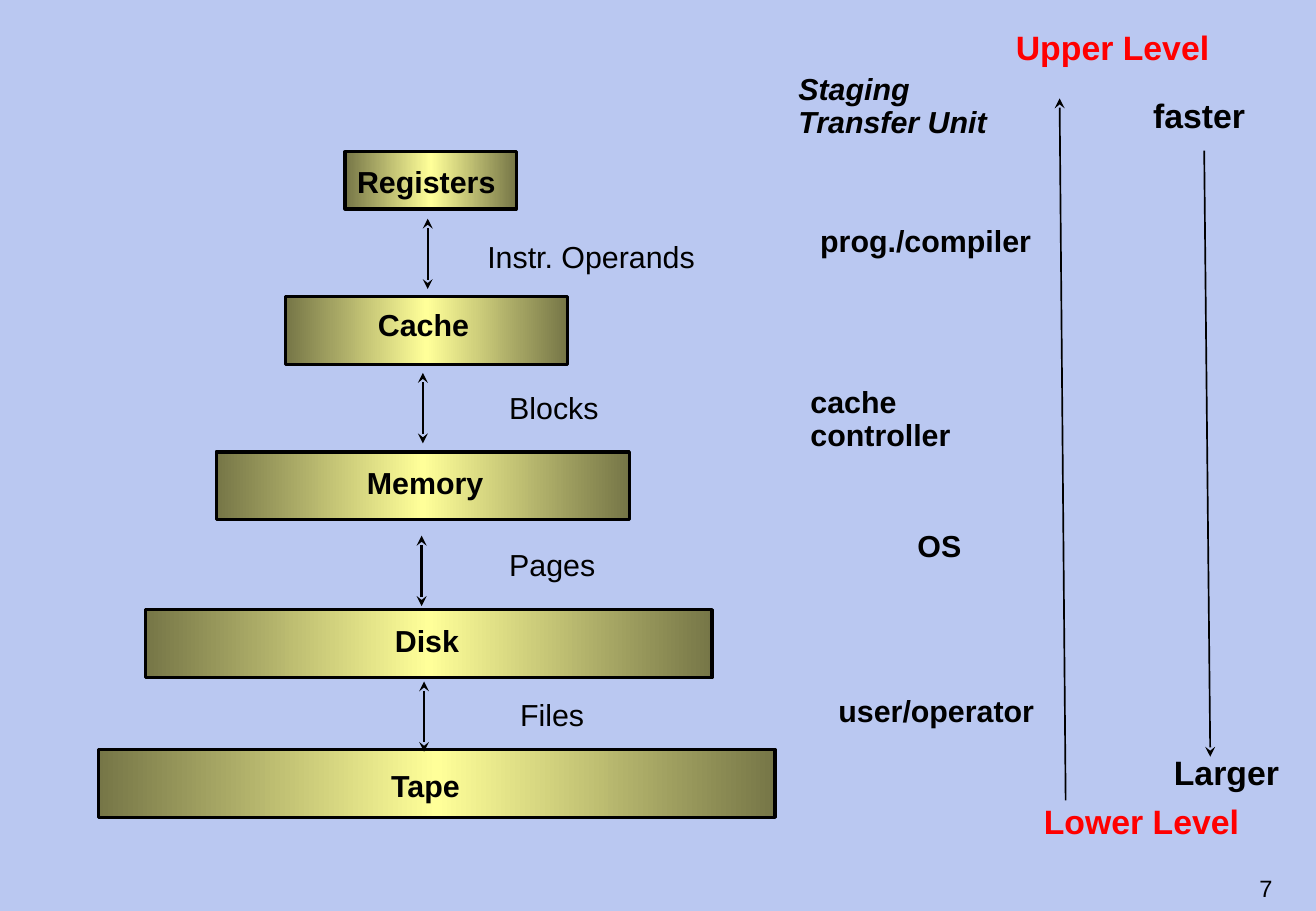
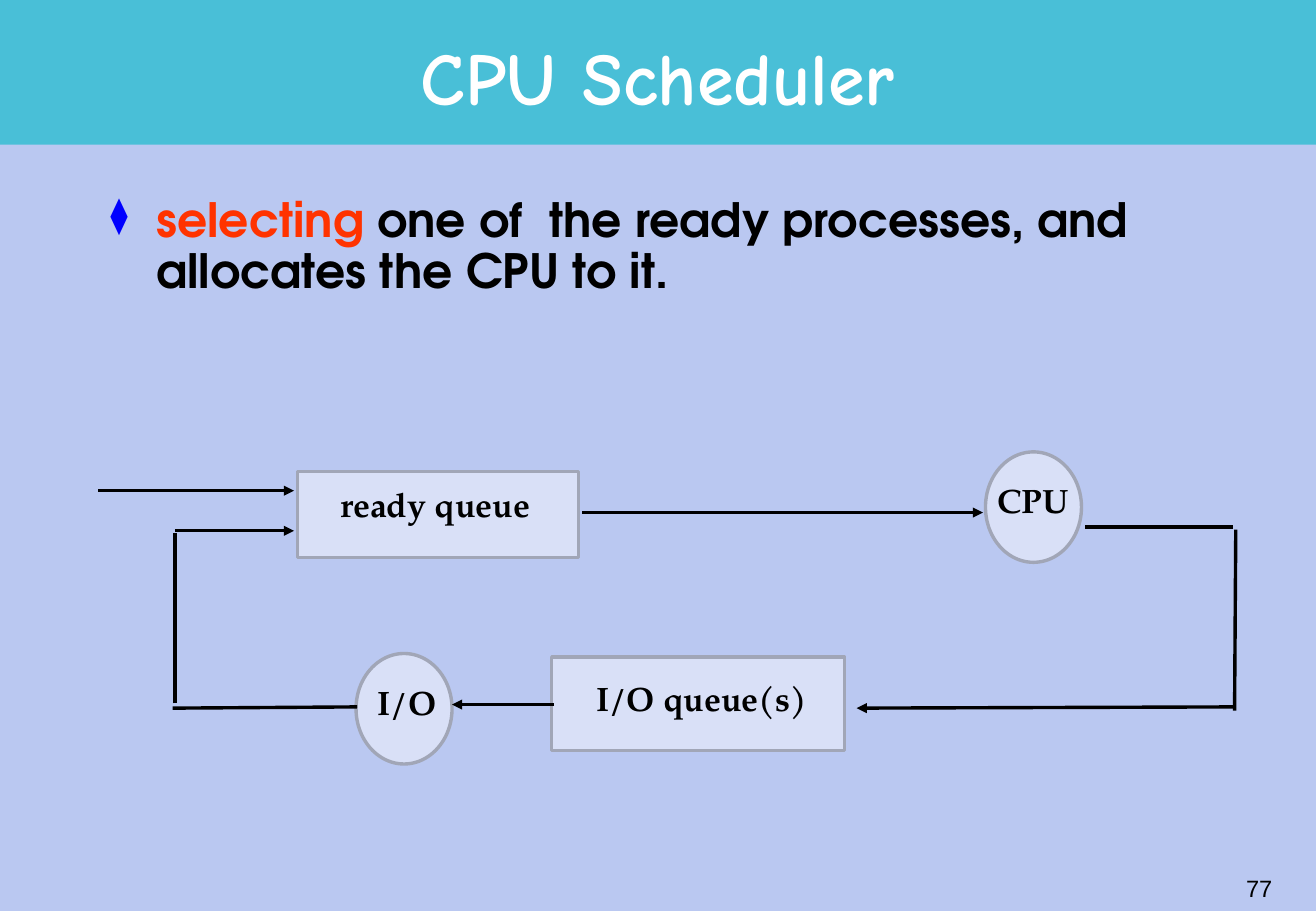
from copy import deepcopy
from dataclasses import dataclass

from pptx import Presentation
from pptx.dml.color import RGBColor as RGB
from pptx.enum.shapes import MSO_CONNECTOR as LINE, MSO_SHAPE as SHAPE
from pptx.enum.text import MSO_ANCHOR as ANCHOR, PP_ALIGN as ALIGN
from pptx.oxml.ns import qn
from pptx.util import Inches, Pt
from lxml.etree import SubElement


@dataclass(frozen=True)
class Theme:
    background = RGB.from_string("BAC8F1")
    band = RGB.from_string("49BFD7")
    ink = RGB.from_string("000000")
    white = RGB.from_string("FFFFFF")
    red = RGB.from_string("FF0000")
    accent = RGB.from_string("FF3300")
    node = RGB.from_string("D9E0F7")
    node_edge = RGB.from_string("A1A6B7")
    olive = RGB.from_string("767647")
    yellow = RGB.from_string("FFFF99")
    bullet = "0000FF"
    title = dict(name="Comic Neue", size=Pt(44), bold=True)
    body = dict(name="TeX Gyre Adventor", size=Pt(28), bold=True)
    queue = dict(name="TeX Gyre Pagella", size=Pt(20), bold=True)
    label = dict(name="Arial", size=Pt(18), bold=True)
    unit = dict(name="Arial", size=Pt(18), bold=False)
    heading = dict(name="Arial", size=Pt(18), bold=True, italic=True)
    end = dict(name="Arial", size=Pt(20), bold=True)
    number = dict(name="Arial", size=Pt(14), bold=False)


theme = Theme()


def write(box, text, font, color=theme.ink, spacing=0.9, inset=(0.07, 0.03),
          align=ALIGN.LEFT, anchor=ANCHOR.TOP):
    """Fill a shape or text box, one paragraph per line; inset is left, top."""
    frame = box.text_frame
    left, top = map(Inches, inset)
    settings = dict(word_wrap=True, vertical_anchor=anchor, margin_left=left,
                    margin_top=top, margin_right=Inches(min(inset[0], 0.1)),
                    margin_bottom=Inches(0.03))
    for name, value in settings.items():
        setattr(frame, name, value)
    for index, line in enumerate(text.split("\n")):
        para = frame.add_paragraph() if index else frame.paragraphs[0]
        para.alignment, para.line_spacing = align, spacing
        span = para.add_run()
        span.text = line
        for name, value in font.items():
            setattr(span.font, name, value)
        span.font.color.rgb = color
    return frame


def connect(page, start, end, width, head=None, tail=None):
    line = page.shapes.add_connector(LINE.STRAIGHT, *map(Inches, start + end))
    line.line.color.rgb = theme.ink
    line.line.width = Pt(width)
    stroke = line.line._get_or_add_ln()
    for tag, kind in (("a:headEnd", head), ("a:tailEnd", tail)):
        if kind:
            SubElement(stroke, qn(tag), type=kind)
    SubElement(line._element.spPr, qn("a:effectLst"))


deck = Presentation()
deck.slide_width, deck.slide_height = Inches(10.83), Inches(7.5)
pages = []
for page_number in ("7", "77"):
    page = deck.slides.add_slide(deck.slide_layouts[6])
    page.background.fill.solid()
    page.background.fill.fore_color.rgb = theme.background
    box = page.shapes.add_textbox(*map(Inches, (8.31, 7.06, 2.26, 0.5)))
    write(box, page_number, theme.number, spacing=1.0, inset=(0.1, 0.03),
          align=ALIGN.RIGHT, anchor=ANCHOR.MIDDLE)
    pages.append(page)
hierarchy, scheduler = pages

# Memory hierarchy: name, box, left and top of the name
levels = [
    ("Registers", (2.84, 1.25, 1.41, 0.47), (2.87, 1.36)),
    ("Cache", (2.35, 2.44, 2.32, 0.56), (3.04, 2.54)),
    ("Memory", (1.78, 3.72, 3.4, 0.56), (2.95, 3.84)),
    ("Disk", (1.2, 5.02, 4.66, 0.56), (3.18, 5.14)),
    ("Tape", (0.81, 6.17, 5.57, 0.56), (3.15, 6.33)),
]
for name, place, (left, top) in levels:
    box = hierarchy.shapes.add_shape(SHAPE.RECTANGLE, *map(Inches, place))
    box.shadow.inherit = False
    box.line.color.rgb, box.line.width = theme.ink, Pt(2)
    box.fill.gradient()
    box.fill.gradient_angle = 0
    stop_list = box._element.spPr.find(qn("a:gradFill")).find(qn("a:gsLst"))
    stop_list.insert(1, deepcopy(stop_list[0]))
    shades = (theme.olive, theme.yellow, theme.olive)
    for index, (stop, shade) in enumerate(zip(box.fill.gradient_stops, shades)):
        stop.position, stop.color.rgb = index / 2, shade
    write(box, name, theme.label, spacing=0.85,
          inset=(round(left - place[0] + 0.07, 2), round(top - place[1] + 0.03, 2)))

# Transfers between neighbouring levels: x, top, line width
for x, top, width in [(3.52, 1.8, 1), (3.48, 3.07, 1), (3.47, 4.41, 2), (3.49, 5.61, 1)]:
    connect(hierarchy, (x, top), (x, top + 0.58), width, "stealth", "stealth")

labels = [
    ("Instr. Operands", (3.94, 1.98, 2.02, 0.31), theme.unit, theme.ink, 0.85),
    ("Blocks", (4.12, 3.22, 0.95, 0.31), theme.unit, theme.ink, 0.85),
    ("Pages", (4.12, 4.51, 0.92, 0.31), theme.unit, theme.ink, 0.85),
    ("Files", (4.21, 5.75, 0.72, 0.31), theme.unit, theme.ink, 0.85),
    ("Staging\nTransfer Unit", (6.5, 0.58, 1.84, 0.6), theme.heading, theme.ink, 0.9),
    ("prog./compiler", (6.68, 1.83, 1.95, 0.34), theme.label, theme.ink, 0.9),
    ("cache controller", (6.6, 3.16, 2.07, 0.6), theme.label, theme.ink, 0.9),
    ("OS", (7.48, 4.34, 0.55, 0.34), theme.label, theme.ink, 0.9),
    ("user/operator", (6.83, 5.7, 1.8, 0.34), theme.label, theme.ink, 0.9),
    ("Upper Level", (8.29, 0.24, 2, 0.34), theme.end, theme.red, 0.85),
    ("Lower Level", (8.52, 6.61, 2, 0.34), theme.end, theme.red, 0.85),
    ("faster", (9.42, 0.8, 0.97, 0.34), theme.end, theme.ink, 0.85),
    ("Larger", (9.59, 6.21, 1.09, 0.34), theme.end, theme.ink, 0.85),
]
for text, place, font, color, spacing in labels:
    box = hierarchy.shapes.add_textbox(*map(Inches, place))
    write(box, text, font, color, spacing)
connect(hierarchy, (8.77, 6.59), (8.72, 0.81), 1, tail="stealth")
connect(hierarchy, (9.91, 1.24), (9.96, 6.23), 1, tail="stealth")

# CPU scheduler: title band and definition
band = scheduler.shapes.add_shape(SHAPE.RECTANGLE, 0, 0, deck.slide_width, Inches(1.19))
band.shadow.inherit = False
band.fill.solid()
band.fill.fore_color.rgb = theme.band
band.line.fill.background()
title = scheduler.shapes.add_textbox(*map(Inches, (0.81, 0.19, 9.21, 0.99)))
write(title, "CPU Scheduler", theme.title, theme.white, 0.85, (0.1, 0.03),
      ALIGN.CENTER, ANCHOR.MIDDLE)

body = scheduler.shapes.add_textbox(*map(Inches, (0.81, 1.57, 9.21, 1.2)))
para = write(body, "selecting", theme.body, theme.accent, inset=(0.1, 0.05)).paragraphs[0]
span = para.add_run()
span.text = " one of  the ready processes, and allocates the CPU to it."
for name, value in theme.body.items():
    setattr(span.font, name, value)
span.font.color.rgb = theme.ink
layout = para._p.get_or_add_pPr()
layout.set("marL", str(Inches(0.38)))
layout.set("indent", str(-Inches(0.38)))
SubElement(SubElement(layout, qn("a:buClr")), qn("a:srgbClr"), val=theme.bullet)
SubElement(layout, qn("a:buSzPct"), val="75000")
SubElement(layout, qn("a:buChar"), char="⧫")

# Queues and devices: name, shape, box, left and top of the name
nodes = [
    ("ready queue", SHAPE.RECTANGLE, (2.45, 3.88, 2.31, 0.71), (2.7, 3.97)),
    ("I/O queue(s)", SHAPE.RECTANGLE, (4.54, 5.41, 2.41, 0.77), (4.81, 5.57)),
    ("I/O", SHAPE.OVAL, (2.93, 5.38, 0.79, 0.91), (3.01, 5.6)),
    ("CPU", SHAPE.OVAL, (8.11, 3.72, 0.79, 0.91), (8.11, 3.94)),
]
for name, kind, place, (left, top) in nodes:
    node = scheduler.shapes.add_shape(kind, *map(Inches, place))
    node.shadow.inherit = False
    node.fill.solid()
    node.fill.fore_color.rgb = theme.node
    node.line.color.rgb, node.line.width = theme.node_edge, Pt(2)
    box = scheduler.shapes.add_textbox(*map(Inches, (left, top, place[2], 0.4)))
    write(box, name, theme.queue, inset=(0.1, 0.05))

routes = [
    ((0.81, 4.04), (2.42, 4.04), "triangle"),
    ((4.79, 4.22), (8.09, 4.22), "triangle"),
    ((8.93, 4.34), (10.15, 4.34), None),
    ((10.17, 4.36), (10.16, 5.85), None),
    ((10.16, 5.82), (7.05, 5.83), "triangle"),
    ((4.56, 5.8), (3.72, 5.8), "triangle"),
    ((2.94, 5.82), (1.42, 5.83), None),
    ((1.44, 5.79), (1.44, 4.39), None),
    ((1.44, 4.37), (2.42, 4.37), "triangle"),
]
for start, end, tail in routes:
    connect(scheduler, start, end, 2, tail=tail)

deck.save("out.pptx")
